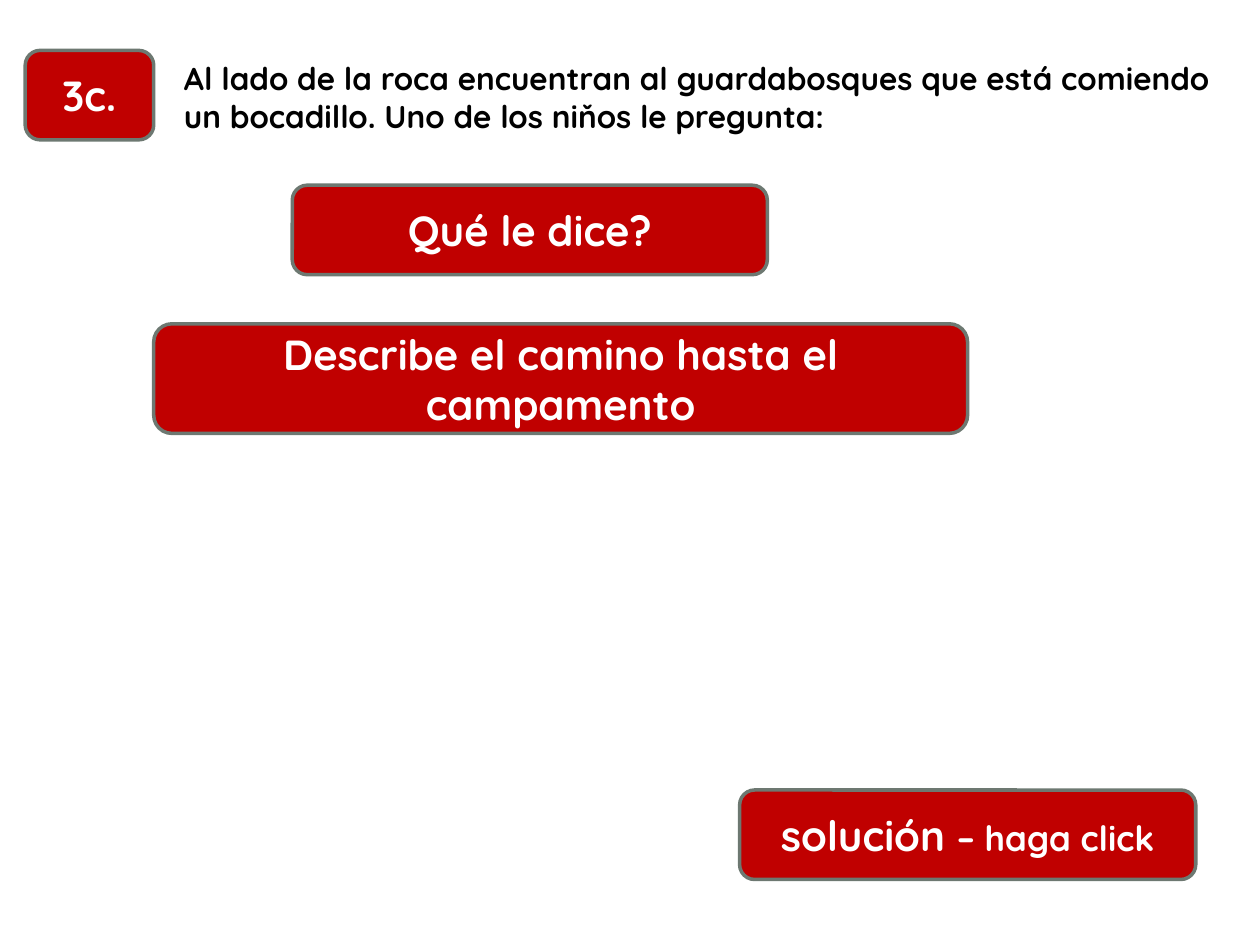
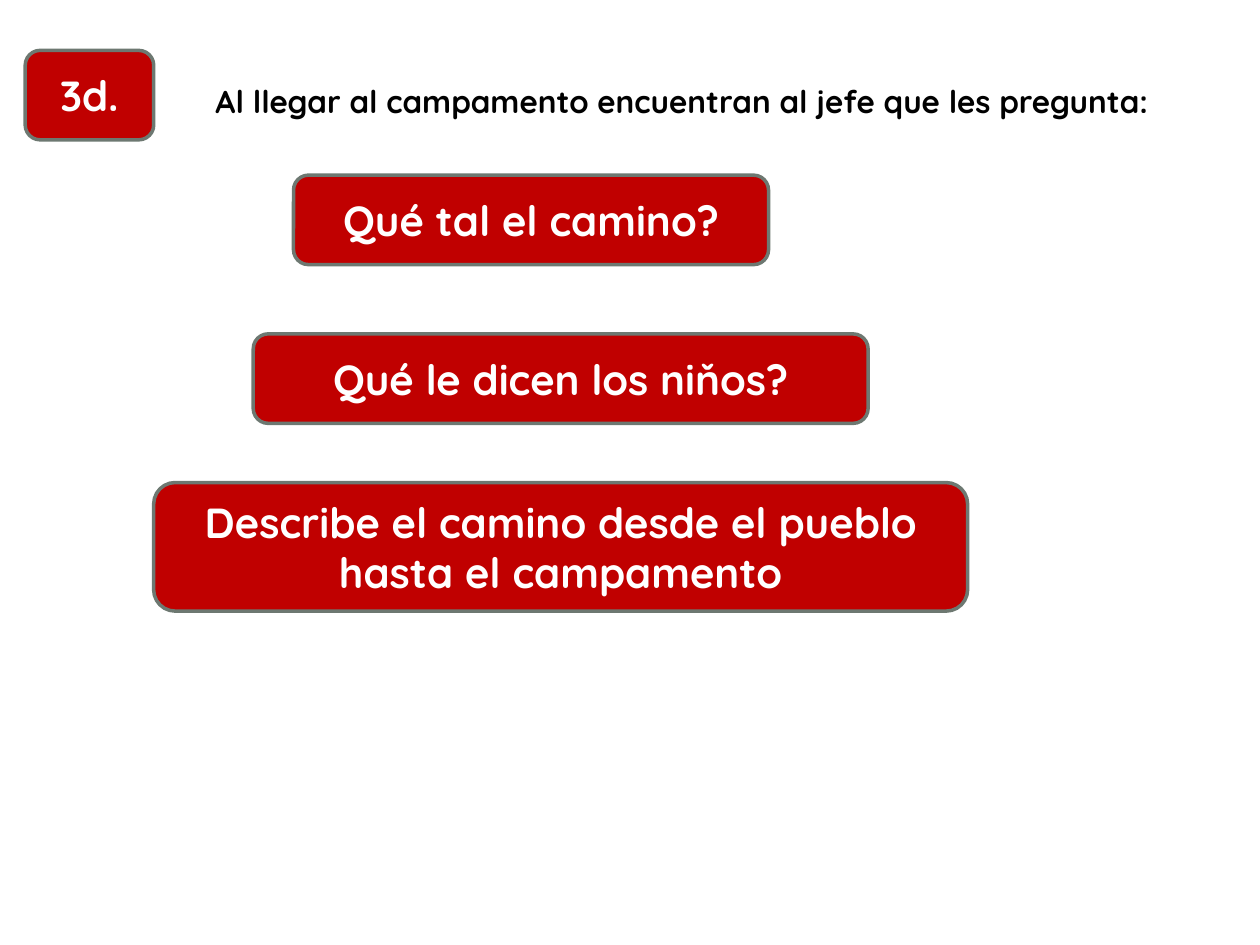
import pptx
import pptx.util
import pptx.dml.color
import pptx.enum.shapes
import pptx.enum.text

Inches = pptx.util.Inches
Pt = pptx.util.Pt
ALIGN = pptx.enum.text.PP_ALIGN
ANCHOR = pptx.enum.text.MSO_ANCHOR

COLORS = {"background": "FFFFFF", "button": "C00000", "border": "6D7871",
          "button_text": "FFFFFF", "prompt": "000000"}
FONT = "Quicksand"
NUMBER_BOX = (0.2, 0.4, 1.02, 0.71)

EXERCISES = [
    {
        "number": "3c.",
        "prompt_box": (1.36, 0.42, 8.65, 0.71),
        "prompt": ["Al lado de la roca encuentran al guardabosques que está comiendo",
                   "un bocadillo. Uno de los niňos le pregunta:"],
        "buttons": [
            ((2.32, 1.47, 3.77, 0.71), [("Qué le dice?", 24)]),
            ((1.22, 2.57, 6.46, 0.87), [("Describe el camino hasta el campamento", 24)]),
            ((5.87, 6.27, 3.62, 0.71), [("solución ", 24), ("– haga click", 20)]),
        ],
    },
    {
        "number": "3d.",
        "prompt_box": (1.61, 0.6, 7.87, 0.4),
        "prompt": ["Al llegar al campamento encuentran al jefe que les pregunta:"],
        "buttons": [
            ((2.33, 1.39, 3.77, 0.71), [("Qué tal el camino?", 24)]),
            ((2.01, 2.65, 4.88, 0.71), [("Qué le dicen los niňos?", 24)]),
            ((1.22, 3.83, 6.46, 1.02),
             [("Describe el camino desde el pueblo hasta el campamento", 24)]),
        ],
    },
]


def rgb(name):
    return pptx.dml.color.RGBColor.from_string(COLORS[name])


def add_run(p, text, size, color):
    r = p.add_run()
    r.text = text
    r.font.name = FONT
    r.font.size = Pt(size)
    r.font.bold = True
    r.font.color.rgb = rgb(color)


def add_button(s, box, runs):
    sp = s.shapes.add_shape(pptx.enum.shapes.MSO_SHAPE.ROUNDED_RECTANGLE,
                            *map(Inches, box))
    sp.shadow.inherit = False
    sp.fill.solid()
    sp.fill.fore_color.rgb = rgb("button")
    sp.line.color.rgb = rgb("border")
    sp.line.width = Pt(2)
    tf = sp.text_frame
    tf.word_wrap = True
    tf.vertical_anchor = ANCHOR.MIDDLE
    p = tf.paragraphs[0]
    p.alignment = ALIGN.CENTER
    for text, size in runs:
        add_run(p, text, size, "button_text")


def set_prompt(s, box, lines):
    sp = s.shapes.title
    sp.left, sp.top, sp.width, sp.height = map(Inches, box)
    tf = sp.text_frame
    tf.word_wrap = False
    tf.auto_size = pptx.enum.text.MSO_AUTO_SIZE.SHAPE_TO_FIT_TEXT
    tf.vertical_anchor = ANCHOR.TOP
    for i, line in enumerate(lines):
        p = tf.add_paragraph() if i else tf.paragraphs[0]
        p.alignment = ALIGN.LEFT
        add_run(p, line, 18, "prompt")


def add_exercise(prs, exercise):
    s = prs.slides.add_slide(prs.slide_layouts.get_by_name("Title Only"))
    set_prompt(s, exercise["prompt_box"], exercise["prompt"])
    add_button(s, NUMBER_BOX, [(exercise["number"], 24)])
    for box, runs in exercise["buttons"]:
        add_button(s, box, runs)


def main():
    prs = pptx.Presentation()
    prs.slide_width, prs.slide_height = Inches(10), Inches(7.5)
    fill = prs.slide_master.background.fill
    fill.solid()
    fill.fore_color.rgb = rgb("background")
    for exercise in EXERCISES:
        add_exercise(prs, exercise)
    prs.save("out.pptx")


if __name__ == "__main__":
    main()
